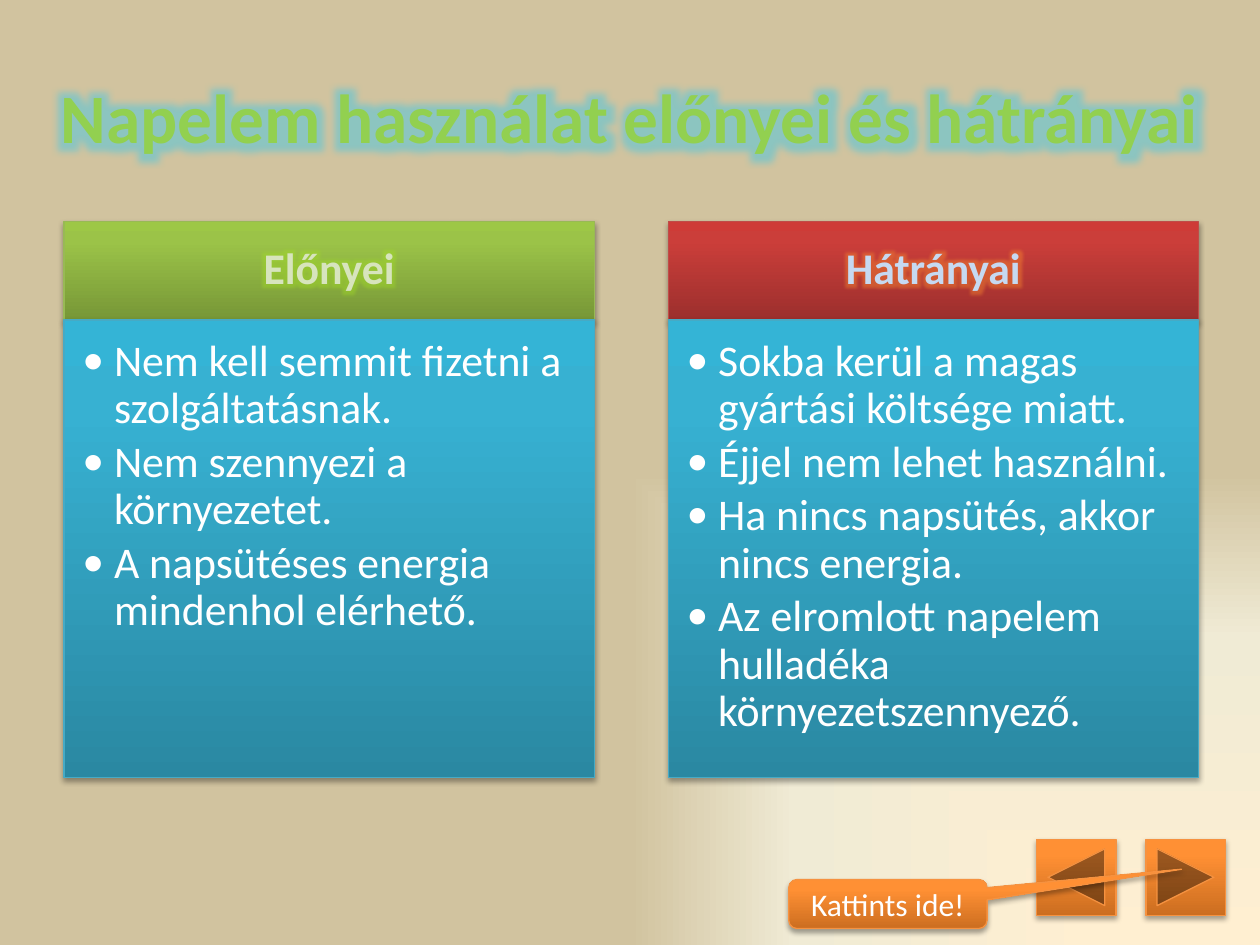
from lxml.etree import SubElement
from pptx import Presentation
from pptx.dml.color import RGBColor
from pptx.enum.shapes import MSO_SHAPE
from pptx.enum.text import MSO_ANCHOR, MSO_AUTO_SIZE, PP_ALIGN
from pptx.oxml.ns import qn
from pptx.util import Cm, Pt

WHITE = RGBColor(0xFF, 0xFF, 0xFF)
TITLE_GREEN = RGBColor(0x92, 0xD0, 0x50)
TITLE_GLOW = RGBColor(0x25, 0xC8, 0xF2)
PALE_GREEN = RGBColor(0xD7, 0xE4, 0xBD)
GREEN_GLOW = RGBColor(0xA4, 0xE0, 0x24)
PALE_BLUE = RGBColor(0xC6, 0xD9, 0xF1)
ORANGE_GLOW = RGBColor(0xFF, 0x90, 0x30)
SHADOW = RGBColor(0, 0, 0)

GREEN_LINE = RGBColor(0x98, 0xB9, 0x55)
RED_LINE = RGBColor(0xBF, 0x4C, 0x48)
BLUE_LINE = RGBColor(0x46, 0xAA, 0xC5)
ORANGE_LINE = RGBColor(0xF6, 0x92, 0x40)

GREENS = [(0, RGBColor(0x77, 0x97, 0x37)), (80, RGBColor(0x9B, 0xC3, 0x48)), (100, RGBColor(0x9D, 0xC7, 0x46))]
REDS = [(0, RGBColor(0x9C, 0x2F, 0x2D)), (80, RGBColor(0xCB, 0x3E, 0x3A)), (100, RGBColor(0xCE, 0x3B, 0x37))]
BLUES = [(0, RGBColor(0x2A, 0x88, 0xA2)), (80, RGBColor(0x37, 0xB1, 0xD2)), (100, RGBColor(0x34, 0xB4, 0xD6))]
ORANGES = [(0, RGBColor(0xCC, 0x6E, 0x20)), (80, RGBColor(0xFF, 0x90, 0x34)), (100, RGBColor(0xFF, 0x91, 0x36))]
SANDS = [(0, RGBColor(0xFF, 0xEF, 0xD1)), (65, RGBColor(0xF0, 0xEB, 0xD5)), (100, RGBColor(0xD1, 0xC3, 0x9F))]

COLUMN_WIDTH = 10.69
HEADING_TOP = 4.46
HEADING_HEIGHT = 1.99
LIST_HEIGHT = 9.22


def add_node(parent, tag, **attributes):
    return SubElement(parent, qn(tag), {key: str(value) for key, value in attributes.items()})


def add_color(parent, color, alpha=None):
    node = add_node(parent, "a:srgbClr", val=color)
    if alpha is not None:
        add_node(node, "a:alpha", val=alpha * 1000)


def replace_with_gradient(properties, stops):
    plain = properties.find(qn("a:noFill"))
    gradient = add_node(properties, "a:gradFill", rotWithShape=1)
    properties.replace(plain, gradient)
    stop_list = add_node(gradient, "a:gsLst")
    for position, color in stops:
        add_color(add_node(stop_list, "a:gs", pos=position * 1000), color)
    return gradient


def paint_background(slide):
    slide.background.fill.background()
    properties = slide.element.find(".//" + qn("p:bgPr"))
    gradient = replace_with_gradient(properties, SANDS)
    corner = add_node(gradient, "a:path", path="rect")
    add_node(corner, "a:fillToRect", l=100000, t=100000)


def add_panel(slide, preset, left, top, width, height, stops, edge):
    panel = slide.shapes.add_shape(preset, Cm(left), Cm(top), Cm(width), Cm(height))
    panel.fill.background()
    panel.line.color.rgb = edge
    panel.line.width = Pt(0.75)
    panel.shadow.inherit = False
    properties = panel.element.spPr
    gradient = replace_with_gradient(properties, stops)
    add_node(gradient, "a:lin", ang=16200000, scaled=0)
    effects = properties.find(qn("a:effectLst"))
    shadow = add_node(effects, "a:outerShdw", blurRad=Pt(3.1), dist=Pt(1.8), dir=5400000, rotWithShape=0)
    add_color(shadow, SHADOW, 35)
    return panel


def add_glow(run, color, radius):
    properties = run._r.get_or_add_rPr()
    effects = add_node(properties, "a:effectLst")
    properties.find(qn("a:solidFill")).addnext(effects)
    add_color(add_node(effects, "a:glow", rad=Pt(radius)), color, 40)


def add_bullet(paragraph):
    paragraph.level = 1
    properties = paragraph._p.get_or_add_pPr()
    properties.set("marL", str(Cm(0.64)))
    properties.set("indent", str(Cm(-0.64)))
    add_node(properties, "a:buFont", typeface="Calibri")
    add_node(properties, "a:buChar", char="•")


def write_text(shape, *lines, size, color, bold=False, align=PP_ALIGN.CENTER, anchor=MSO_ANCHOR.MIDDLE,
               insets=(0.25, 0.13, 0.25, 0.13), spacing=None, after=0, bullet=False, glow=None, radius=11):
    frame = shape.text_frame
    frame.word_wrap = True
    frame.auto_size = MSO_AUTO_SIZE.NONE
    frame.vertical_anchor = anchor
    frame.margin_left, frame.margin_top, frame.margin_right, frame.margin_bottom = map(Cm, insets)
    for index, line in enumerate(lines):
        paragraph = frame.add_paragraph() if index else frame.paragraphs[0]
        paragraph.alignment = align
        paragraph.line_spacing = spacing
        paragraph.space_after = Pt(after)
        run = paragraph.add_run()
        run.text = line
        run.font.size = Pt(size)
        run.font.bold = bold
        run.font.color.rgb = color
        run.font.name = "Calibri"
        if glow is not None:
            add_glow(run, glow, radius)
        if bullet:
            add_bullet(paragraph)


def add_column(slide, left, heading, points, stops, edge, color, glow):
    header = add_panel(slide, MSO_SHAPE.RECTANGLE, left, HEADING_TOP, COLUMN_WIDTH, HEADING_HEIGHT, stops, edge)
    write_text(header, heading, size=25, color=color, bold=True, insets=(0.48, 0.28, 0.48, 0.28),
               spacing=0.9, glow=glow)
    body = add_panel(slide, MSO_SHAPE.RECTANGLE, left, HEADING_TOP + HEADING_HEIGHT,
                     COLUMN_WIDTH, LIST_HEIGHT, BLUES, BLUE_LINE)
    write_text(body, *points, size=25, color=WHITE, align=PP_ALIGN.LEFT, anchor=MSO_ANCHOR.TOP,
               insets=(0.37, 0.37, 0.48, 0.56), spacing=0.9, after=3.75, bullet=True)


def add_title(slide):
    title = slide.shapes.title
    title.left, title.top, title.width, title.height = Cm(0.49), Cm(0.75), Cm(24.4), Cm(3.18)
    write_text(title, "Napelem használat előnyei és hátrányai", size=39.6, color=TITLE_GREEN,
               bold=True, glow=TITLE_GLOW, radius=18)


def add_navigation(slide):
    buttons = [(MSO_SHAPE.ACTION_BUTTON_BACK_OR_PREVIOUS, 20.9), (MSO_SHAPE.ACTION_BUTTON_FORWARD_OR_NEXT, 23.1)]
    for preset, left in buttons:
        add_panel(slide, preset, left, 16.92, 1.6, 1.53, ORANGES, ORANGE_LINE)
    hint = add_panel(slide, MSO_SHAPE.ROUNDED_RECTANGULAR_CALLOUT, 15.9, 17.73, 4, 0.99, ORANGES, ORANGE_LINE)
    for index, value in enumerate((1.48, -0.71, 0.17)):
        hint.adjustments[index] = value
    write_text(hint, "Kattints ide!", size=18, color=WHITE)


def main():
    presentation = Presentation()
    presentation.slide_width, presentation.slide_height = Cm(25.4), Cm(19.05)
    slide = presentation.slides.add_slide(presentation.slide_layouts[5])
    paint_background(slide)
    add_title(slide)
    add_column(slide, 1.29, "Előnyei", [
        "Nem kell semmit fizetni a szolgáltatásnak.",
        "Nem szennyezi a környezetet.",
        "A napsütéses energia mindenhol elérhető.",
    ], GREENS, GREEN_LINE, PALE_GREEN, GREEN_GLOW)
    add_column(slide, 13.47, "Hátrányai", [
        "Sokba kerül a magas gyártási költsége miatt.",
        "Éjjel nem lehet használni.",
        "Ha nincs napsütés, akkor nincs energia.",
        "Az elromlott napelem hulladéka környezetszennyező.",
    ], REDS, RED_LINE, PALE_BLUE, ORANGE_GLOW)
    add_navigation(slide)
    presentation.save("out.pptx")


if __name__ == "__main__":
    main()
